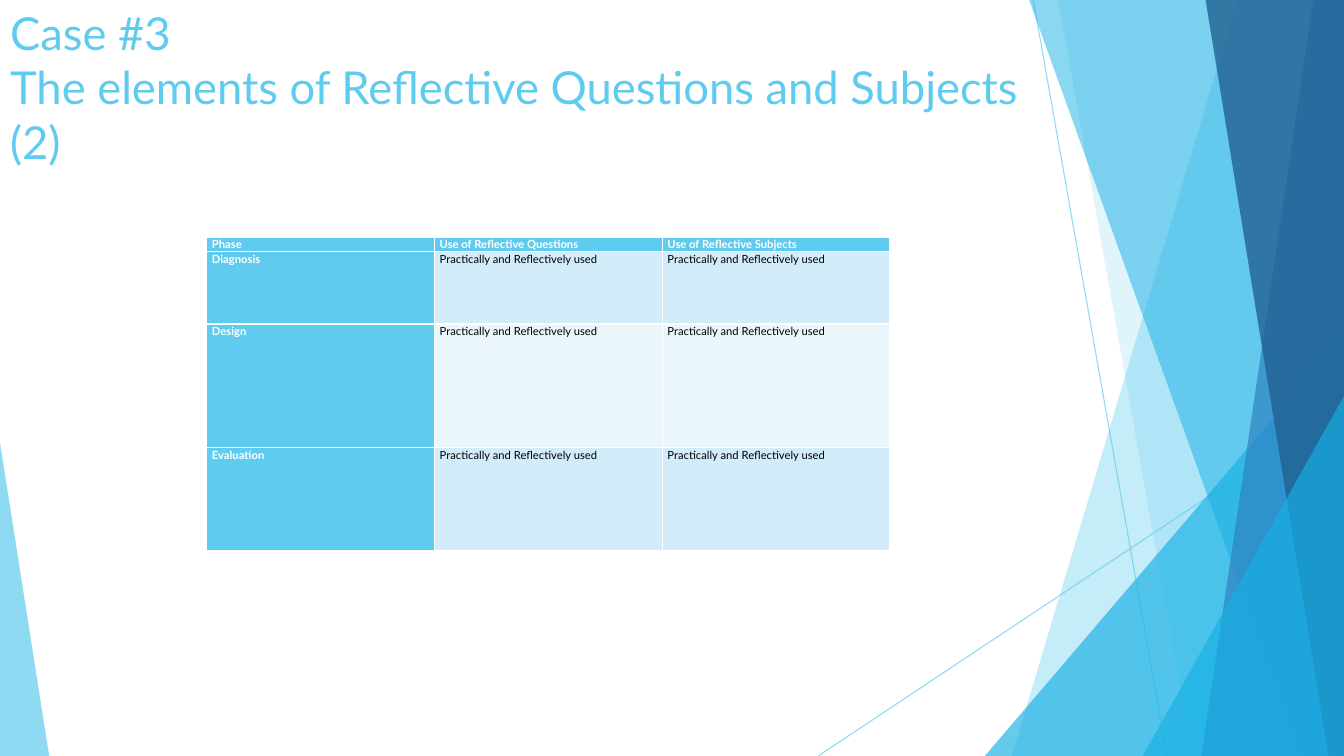
from lxml.etree import SubElement
from pptx import Presentation
from pptx.dml.color import RGBColor
from pptx.enum.shapes import MSO_CONNECTOR, MSO_SHAPE
from pptx.enum.text import MSO_ANCHOR, MSO_AUTO_SIZE, PP_ALIGN
from pptx.oxml.ns import qn
from pptx.util import Cm, Pt

SKY = RGBColor(0x5F, 0xCB, 0xEF)
CYAN = RGBColor(0x17, 0xB0, 0xE4)
BLUE = RGBColor(0x2E, 0x83, 0xC3)
NAVY = RGBColor(0x22, 0x62, 0x92)
PALE = RGBColor(0xD2, 0xEC, 0xF9)
PALER = RGBColor(0xEA, 0xF6, 0xFC)
WHITE = RGBColor(0xFF, 0xFF, 0xFF)
BLACK = RGBColor(0, 0, 0)

FONT = "Lato"
PAGE_WIDTH = 33.87
PAGE_HEIGHT = 19.05
BAND_TOP = -0.02

USED = "Practically and Reflectively used"
ROWS = [
    ("Phase", "Use of Reflective Questions", "Use of Reflective Subjects"),
    ("Diagnosis", USED, USED),
    ("Design", USED, USED),
    ("Evaluation", USED, USED),
]
ROW_HEIGHTS = [0.25, 1.83, 3.12, 2.59]
COLUMN_WIDTH = 5.74


def set_opacity(fill_parent, percent):
    color = next(fill_parent.iter(qn("a:srgbClr")))
    SubElement(color, qn("a:alpha")).set("val", str(percent * 1000))


def paint(shape, color, opacity):
    shape.shadow.inherit = False
    shape.fill.solid()
    shape.fill.fore_color.rgb = color
    shape.line.fill.background()
    set_opacity(shape.fill._xPr, opacity)


def add_thin_line(page, start_x, start_y, end_x, end_y):
    line = page.shapes.add_connector(
        MSO_CONNECTOR.STRAIGHT, Cm(start_x), Cm(start_y), Cm(end_x), Cm(end_y)
    )
    line.line.color.rgb = SKY
    line.line.width = Pt(0.75)
    properties = line._element.spPr
    set_opacity(properties, 70)
    SubElement(properties, qn("a:effectLst"))


def add_band(page, top_x, bottom_x, color, opacity):
    builder = page.shapes.build_freeform(Cm(top_x), Cm(BAND_TOP))
    corners = [(PAGE_WIDTH, BAND_TOP), (PAGE_WIDTH, PAGE_HEIGHT), (bottom_x, PAGE_HEIGHT)]
    builder.add_line_segments([(Cm(x), Cm(y)) for x, y in corners])
    paint(builder.convert_to_shape(), color, opacity)


def add_corner(page, left, top, width, peak, color, opacity):
    corner = page.shapes.add_shape(
        MSO_SHAPE.ISOSCELES_TRIANGLE, Cm(left), Cm(top), Cm(width), Cm(PAGE_HEIGHT - top)
    )
    corner.adjustments[0] = peak
    paint(corner, color, opacity)


def add_decoration(page):
    add_thin_line(page, 26.04, 0, 29.41, PAGE_HEIGHT)
    add_thin_line(page, PAGE_WIDTH, 10.24, 20.62, PAGE_HEIGHT)
    add_band(page, 31.19, 25.5, SKY, 36)
    add_band(page, 26.67, 30.05, SKY, 20)
    add_corner(page, 24.82, 8.46, 9.05, 1, CYAN, 66)
    add_band(page, 25.93, 32.79, CYAN, 50)
    add_band(page, 33.1, 30.28, BLUE, 70)
    add_band(page, 30.38, 33.48, NAVY, 80)
    add_corner(page, 28.8, 9.98, 5.07, 1, CYAN, 66)
    add_corner(page, 0, 11.15, 1.24, 0, SKY, 70)


def style_font(para, size, color, bold):
    para.font.name = FONT
    para.font.size = Pt(size)
    para.font.color.rgb = color
    para.font.bold = bold


def set_title(page, text):
    title = page.shapes.title
    title.left, title.top, title.width, title.height = Cm(0), Cm(0), Cm(27.23), Cm(3.66)
    frame = title.text_frame
    frame.text = text
    frame.word_wrap = True
    frame.auto_size = MSO_AUTO_SIZE.NONE
    frame.vertical_anchor = MSO_ANCHOR.TOP
    para = frame.paragraphs[0]
    para.alignment = PP_ALIGN.LEFT
    style_font(para, 32.4, SKY, False)


def fill_cell(cell, text, background, color, bold):
    cell.fill.solid()
    cell.fill.fore_color.rgb = background
    cell.margin_left = cell.margin_right = Cm(0.13)
    cell.margin_top = cell.margin_bottom = Cm(0)
    cell.text = text
    para = cell.text_frame.paragraphs[0]
    para.line_spacing = 1.07
    style_font(para, 8, color, bold)


def add_phase_table(page):
    count = len(ROWS[0])
    table = page.shapes.add_table(
        len(ROWS), count, Cm(5.21), Cm(5.97), Cm(count * COLUMN_WIDTH), Cm(sum(ROW_HEIGHTS))
    ).table
    table.first_col = True
    for column in table.columns:
        column.width = Cm(COLUMN_WIDTH)
    for row_index, texts in enumerate(ROWS):
        table.rows[row_index].height = Cm(ROW_HEIGHTS[row_index])
        for column_index, text in enumerate(texts):
            cell = table.cell(row_index, column_index)
            if row_index == 0 or column_index == 0:
                fill_cell(cell, text, SKY, WHITE, True)
            else:
                fill_cell(cell, text, PALE if row_index % 2 else PALER, BLACK, False)


def main():
    deck = Presentation()
    deck.slide_width = Cm(PAGE_WIDTH)
    deck.slide_height = Cm(PAGE_HEIGHT)
    page = deck.slides.add_slide(deck.slide_layouts[5])
    add_decoration(page)
    set_title(page, "Case #3 \vThe elements of Reflective Questions and Subjects (2)")
    add_phase_table(page)
    deck.save("out.pptx")


if __name__ == "__main__":
    main()
